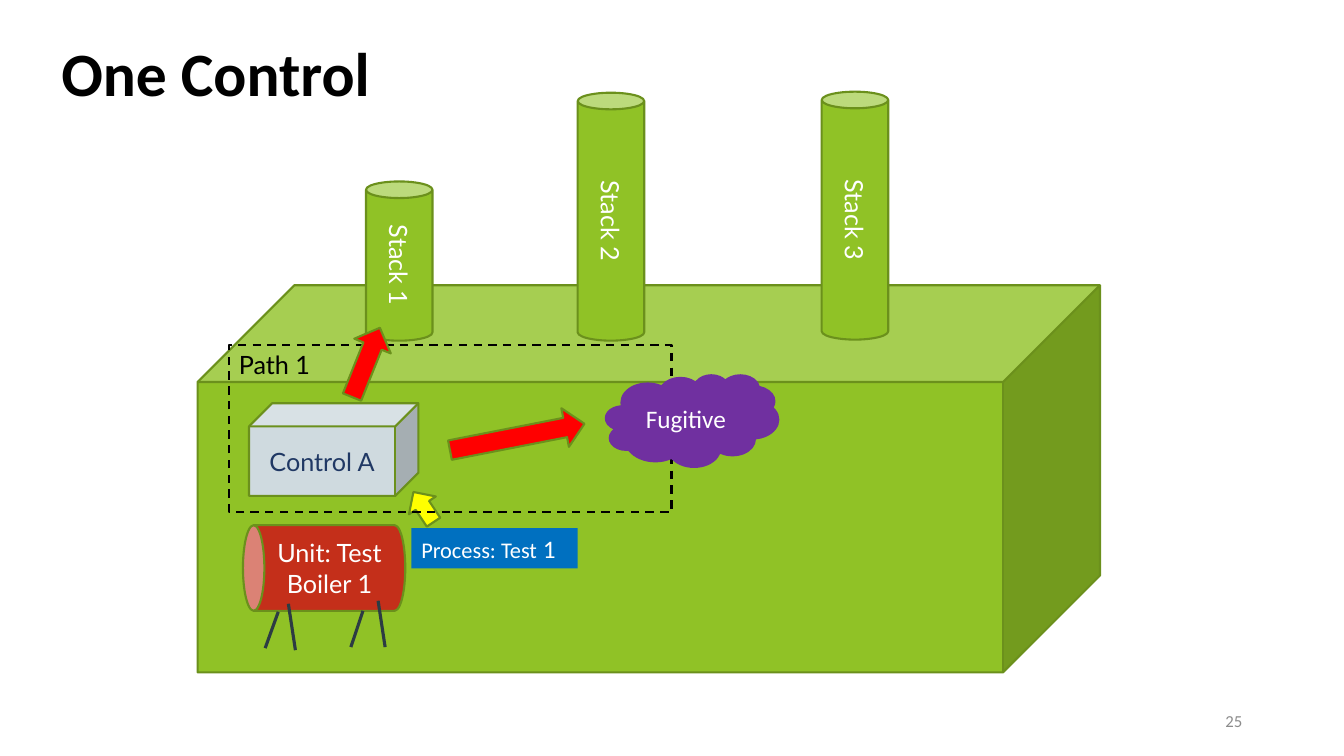
from lxml import etree
from pptx import Presentation
from pptx.dml.color import RGBColor
from pptx.enum import dml, shapes, text
from pptx.oxml import ns
from pptx.util import Inches, Pt

GREEN = RGBColor(0x90, 0xC2, 0x26)
OLIVE = RGBColor(0x6B, 0x90, 0x1C)
BOILER_RED = RGBColor(0xC4, 0x2F, 0x1A)
SLATE = RGBColor(0x2C, 0x3C, 0x43)
PALE = RGBColor(0xCF, 0xDA, 0xDF)
NAVY = RGBColor(0x20, 0x38, 0x64)
YELLOW = RGBColor(0xFF, 0xFF, 0x00)
RED = RGBColor(0xFF, 0x00, 0x00)
BLUE = RGBColor(0x00, 0x70, 0xC0)
PURPLE = RGBColor(0x70, 0x30, 0xA0)
GRAY = RGBColor(0x8C, 0x8C, 0x8C)
BLACK = RGBColor(0, 0, 0)
WHITE = RGBColor(0xFF, 0xFF, 0xFF)

SHAPE = shapes.MSO_SHAPE
ALIGN = text.PP_ALIGN
ANCHOR = text.MSO_ANCHOR


def add_text(sp, content, size=18, font="Lato", color=WHITE, bold=False,
             align=ALIGN.CENTER, anchor=ANCHOR.MIDDLE, vertical=False):
    tf = sp.text_frame
    tf.word_wrap = True
    tf.vertical_anchor = anchor
    if vertical:
        sp.element.txBody.bodyPr.set("vert", "vert")
    p = tf.paragraphs[0]
    p.alignment = align
    r = p.add_run()
    r.text = content
    r.font.size = Pt(size)
    r.font.name = font
    r.font.bold = bold
    r.font.color.rgb = color


def add_block(parent, kind, box, fill=None, line=OLIVE, rotation=0):
    sp = parent.add_shape(kind, *[Inches(v) for v in box])
    sp.shadow.inherit = False
    sp.rotation = rotation
    if fill is None:
        sp.fill.background()
    else:
        sp.fill.solid()
        sp.fill.fore_color.rgb = fill
    if line is None:
        sp.line.fill.background()
    else:
        sp.line.color.rgb = line
        sp.line.width = Pt(1.5)
    return sp


prs = Presentation()
prs.slide_width = Inches(13.33)
prs.slide_height = Inches(7.5)
s = prs.slides.add_slide(prs.slide_layouts[6])

add_block(s.shapes, SHAPE.CUBE, (1.96, 2.83, 8.95, 3.84), GREEN)

for name, left, top, height in [("Stack 3", 8.15, 0.91, 2.46),
                                ("Stack 2", 5.73, 0.92, 2.46),
                                ("Stack 1", 3.63, 1.8, 1.58)]:
    stack = add_block(s.shapes, SHAPE.CAN, (left, top, 0.66, height), GREEN)
    add_text(stack, name, vertical=True)

boiler = s.shapes.add_group_shape()
tank = add_block(boiler.shapes, SHAPE.CAN, (2.79, 4.83, 0.85, 1.61), BOILER_RED, rotation=270)
add_text(tank, "Unit: Test Boiler 1", vertical=True)
for leg in [(2.76, 6.07, 2.63, 6.43), (3.6, 6.06, 3.48, 6.42),
            (3.75, 5.96, 3.82, 6.42), (2.86, 5.99, 2.93, 6.45)]:
    cx = boiler.shapes.add_connector(shapes.MSO_CONNECTOR.STRAIGHT, *[Inches(v) for v in leg])
    cx.line.color.rgb = SLATE
    cx.line.width = Pt(2.25)
    etree.SubElement(cx.element.spPr, ns.qn("a:effectLst"))

control = add_block(s.shapes, SHAPE.CUBE, (2.47, 4, 1.68, 0.92), PALE)
add_text(control, "Control A", color=NAVY)

add_block(s.shapes, SHAPE.RIGHT_ARROW, (4.02, 4.87, 0.36, 0.32), YELLOW, rotation=236.3)

route = add_block(s.shapes, SHAPE.RECTANGLE, (2.27, 3.42, 4.39, 1.66), line=BLACK)
route.line.dash_style = dml.MSO_LINE.DASH
add_text(route, "Path 1", color=BLACK, align=ALIGN.LEFT, anchor=ANCHOR.TOP)

process = add_block(s.shapes, SHAPE.RECTANGLE, (4.08, 5.24, 1.65, 0.4), BLUE, line=None)
label = dict(font="Calibri", align=ALIGN.LEFT, anchor=ANCHOR.TOP)
add_text(process, "Process: Test", size=16, **label)
add_text(process, " 1", **label)

title = s.shapes.add_textbox(Inches(0.51), Inches(0.3), Inches(3.34), Inches(0.84))
add_text(title, "One Control", size=44, color=BLACK, bold=True, **label)

number = s.shapes.add_textbox(Inches(9.42), Inches(6.95), Inches(3), Inches(0.4))
add_text(number, "25", size=12, font="Calibri", color=GRAY, align=ALIGN.RIGHT)

for box, angle in [((3.26, 3.4, 0.74, 0.39), 291.9), ((4.45, 4.14, 1.36, 0.39), 348.9)]:
    add_block(s.shapes, SHAPE.RIGHT_ARROW, box, RED, rotation=angle)

cloud = add_block(s.shapes, SHAPE.CLOUD, (6, 3.71, 1.73, 0.93), PURPLE, line=None)
add_text(cloud, "Fugitive", font="Calibri")

prs.save("out.pptx")
